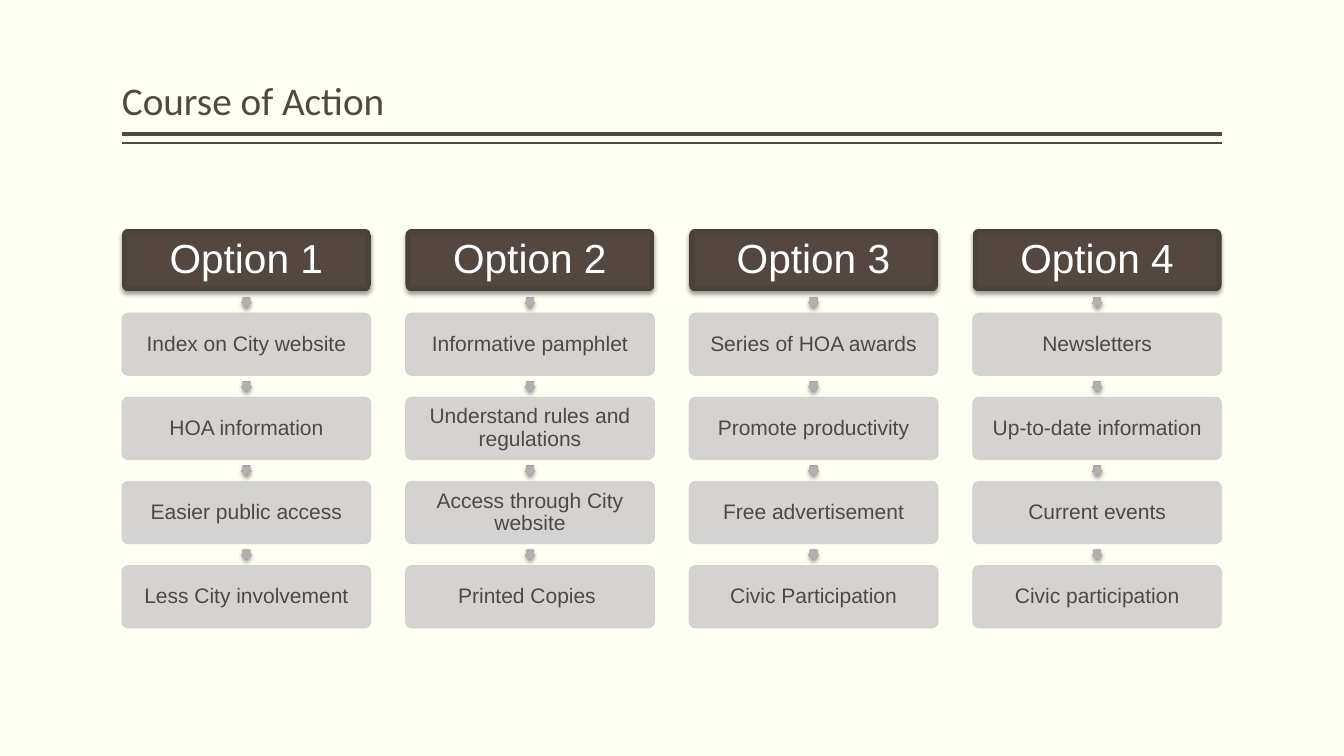
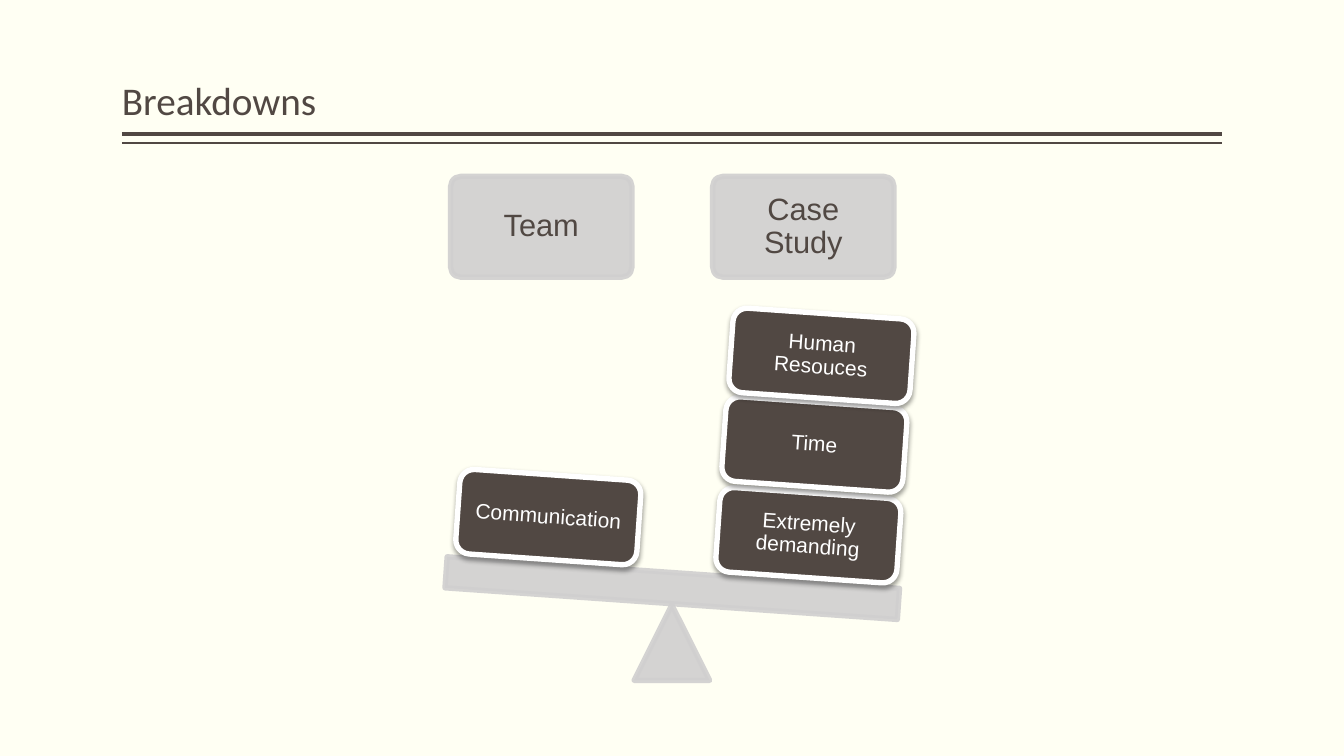
from pptx import Presentation
from pptx.dml.color import RGBColor
from pptx.enum.shapes import MSO_CONNECTOR, MSO_SHAPE
from pptx.enum.text import MSO_ANCHOR, PP_ALIGN
from pptx.oxml import parse_xml
from pptx.oxml.ns import nsdecls, qn
from pptx.util import Inches, Pt

CREAM = RGBColor(0xFF, 0xFF, 0xF3)
BROWN = RGBColor(0x51, 0x48, 0x43)
GREY = RGBColor(0xD0, 0xCF, 0xCF)
WHITE = RGBColor(0xFF, 0xFF, 0xFF)
DARK = ("544740", "534740", "4A3F39")
STEEL = ("B3B1B0", "B2AFAE", "9E9C9B")
LEFT, WIDE = 1.21, 10.91
ROUND = MSO_SHAPE.ROUNDED_RECTANGLE


def draw(slide, kind, box, fill, line=None, edge=0, blur=0, turn=0, adj=()):
    shape = slide.shapes.add_shape(kind, *[Inches(n) for n in box])
    shape.rotation = turn
    for i, n in enumerate(adj):
        shape.adjustments[i] = n
    props = shape._element.spPr
    if isinstance(fill, RGBColor):
        shape.fill.solid()
        shape.fill.fore_color.rgb = fill
    else:
        shape.fill.background()
        stops = "".join(
            f'<a:gs pos="{pos}"><a:srgbClr val="{tone}"/></a:gs>'
            for pos, tone in zip((0, 71000, 100000), fill))
        props.replace(props.find(qn("a:noFill")), parse_xml(
            f'<a:gradFill {nsdecls("a")} rotWithShape="1"><a:gsLst>{stops}</a:gsLst>'
            '<a:path path="rect"><a:fillToRect l="50000" t="50000" r="50000" b="50000"/>'
            '</a:path></a:gradFill>'))
    if line is None:
        shape.line.fill.background()
    else:
        shape.line.color.rgb = line
        shape.line.width = Pt(edge)
    if fill == GREY:
        for tone in props.iter(qn("a:srgbClr")):
            tone.append(parse_xml(f'<a:alpha {nsdecls("a")} val="90000"/>'))
    shape.shadow.inherit = False
    if blur:
        props.find(qn("a:effectLst")).append(parse_xml(
            f'<a:outerShdw {nsdecls("a")} blurRad="{Pt(blur)}" dist="{Pt(2)}" '
            'dir="5400000" algn="ctr" rotWithShape="0">'
            '<a:srgbClr val="000000"><a:alpha val="38000"/></a:srgbClr></a:outerShdw>'))
    return shape


def write(shape, text, size, color, pad, font="Arial",
          align=PP_ALIGN.CENTER, anchor=MSO_ANCHOR.MIDDLE):
    frame = shape.text_frame
    frame.word_wrap = True
    frame.vertical_anchor = anchor
    frame.margin_left = frame.margin_right = Inches(pad[0])
    frame.margin_top = frame.margin_bottom = Inches(pad[1])
    para = frame.paragraphs[0]
    para.alignment = align
    para.line_spacing = 0.9
    run = para.add_run()
    run.text = text
    run.font.name = font
    run.font.size = Pt(size)
    run.font.color.rgb = color


deck = Presentation()
deck.slide_width, deck.slide_height = Inches(40 / 3), Inches(7.5)
back = deck.slide_master.background.fill
back.solid()
back.fore_color.rgb = CREAM

pages = []
for title in ("Course of Action", "Breakdowns"):
    slide = deck.slides.add_slide(deck.slide_layouts[6])
    for y, width in ((1.33, 3), (1.42, 1)):
        rule = slide.shapes.add_connector(
            MSO_CONNECTOR.STRAIGHT, Inches(LEFT), Inches(y), Inches(LEFT + WIDE), Inches(y))
        rule.line.color.rgb = BROWN
        rule.line.width = Pt(width)
        rule._element.spPr.append(parse_xml(f'<a:effectLst {nsdecls("a")}/>'))
    head = slide.shapes.add_textbox(Inches(LEFT), Inches(0.08), Inches(WIDE), Inches(1.2))
    write(head, title, 28, BROWN, (0, 0.05), "Calibri", PP_ALIGN.LEFT, MSO_ANCHOR.BOTTOM)
    pages.append(slide)
plan, scale = pages

options = (
    ("Option 1", "Index on City website", "HOA information",
     "Easier public access", "Less City involvement"),
    ("Option 2", "Informative pamphlet", "Understand rules and regulations",
     "Access through City website", "Printed Copies "),
    ("Option 3", "Series of HOA awards", "Promote productivity",
     "Free advertisement", "Civic Participation"),
    ("Option 4", "Newsletters", "Up-to-date information",
     "Current events", "Civic participation"),
)
CARD, TALL, TIP, TOP = 2.47, 0.62, 0.11, 2.27
across = (WIDE - CARD) / 3
down = (5.61 - TOP) / 4
for col, option in enumerate(options):
    x = LEFT + col * across
    for row, text in enumerate(option):
        y = TOP + row * down
        box = (x, y, CARD, TALL)
        if row == 0:
            card = draw(plan, ROUND, box, DARK, blur=3.1, adj=[0.1])
            write(card, text, 29, WHITE, (0.04, 0.04))
        else:
            draw(plan, MSO_SHAPE.RIGHT_ARROW,
                 (x + (CARD - TIP) / 2, y - 0.16, TIP, TIP),
                 STEEL, blur=3.1, turn=90, adj=[0.67, 0.5])
            card = draw(plan, ROUND, box, GREY, GREY, 0.5, adj=[0.1])
            write(card, text, 15, BROWN, (0.02, 0.02))

for x, text in ((4.47, "Team"), (7.07, "Case Study")):
    side = draw(scale, ROUND, (x, 1.75, 1.8, 1), GREY, GREY, 3.78, adj=[0.1])
    write(side, text, 22, BROWN, (0.09, 0.09))
draw(scale, MSO_SHAPE.ISOSCELES_TRIANGLE, (6.29, 6, 0.75, 0.75), GREY, GREY, 3.78)
draw(scale, MSO_SHAPE.RECTANGLE, (4.42, 5.68, 4.5, 0.31), GREY, GREY, 3.78, turn=4)
weights = (
    (7.12, 4.89, "Extremely demanding"),
    (7.18, 3.99, "Time"),
    (7.25, 3.11, "Human Resouces"),
    (4.54, 4.71, "Communication"),
)
for x, y, text in weights:
    block = draw(scale, ROUND, (x, y, 1.8, 0.84), BROWN, WHITE, 3.82, blur=3.5, turn=4)
    write(block, text, 15, WHITE, (0.06, 0.06))

deck.save("out.pptx")
